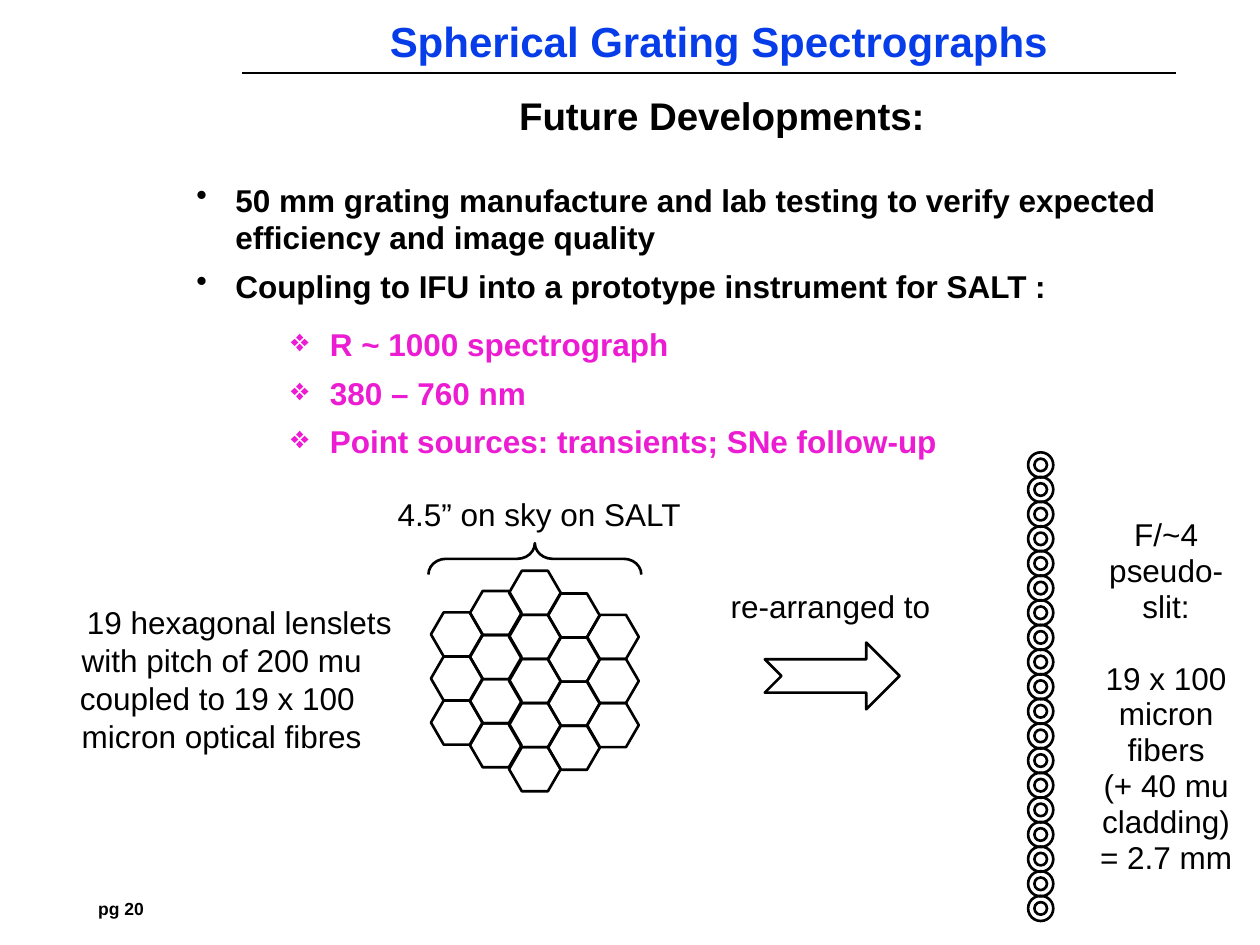
from lxml import etree
from pptx import Presentation
from pptx.dml.color import RGBColor
from pptx.enum.shapes import MSO_CONNECTOR, MSO_SHAPE
from pptx.enum.text import MSO_ANCHOR, MSO_AUTO_SIZE, PP_ALIGN
from pptx.oxml.ns import qn
from pptx.util import Inches, Pt

LEFT, MID = PP_ALIGN.LEFT, PP_ALIGN.CENTER
TOP, CENTRE, BASE = MSO_ANCHOR.TOP, MSO_ANCHOR.MIDDLE, MSO_ANCHOR.BOTTOM
HEXAGON, DONUT = MSO_SHAPE.HEXAGON, MSO_SHAPE.DONUT
BRACE, ARROW = MSO_SHAPE.RIGHT_BRACE, MSO_SHAPE.NOTCHED_RIGHT_ARROW
BLACK, WHITE, BLUE, PINK = "000000", "FFFFFF", "063DE8", "EC1CD3"

TITLE = ("Spherical Grating Spectrographs",
         dict(size=24, color=BLUE, bold=True, align=MID, line=0.9))
HEAD = dict(size=22, bold=True, align=MID, line=0.9, after=24)
POINT = dict(bold=True, bullet="•", margin=0.31, indent=-0.31, after=6)
SUB = dict(POINT, bullet="❖", margin=1.06, color=PINK)
BODY = [
    ("Future Developments:", HEAD),
    ("50 mm grating manufacture and lab testing to verify expected "
     "efficiency and image quality", POINT),
    ("Coupling to IFU into a prototype instrument for SALT :",
     dict(POINT, after=12)),
    ("R ~ 1000 spectrograph", SUB),
    ("380 – 760 nm", SUB),
    ("Point sources: transients; SNe follow-up", SUB),
]
SLIT = dict(align=MID, line=0.95)
# left, top, width, height, anchor, side inset, paragraphs
BOXES = [
    (0.67, 7.17, 0.58, 0.08, CENTRE, 0,
     [("pg 20", dict(size=10, bold=True, align=MID))]),
    (1.46, 0.76, 8.54, 2.9, CENTRE, 0.1, BODY),
    (2.81, 3.94, 2.94, 0.34, TOP, 0.1,
     [("4.5” on sky on SALT", dict(align=MID, line=0.8))]),
    (0.16, 4.74, 3.2, 1.31, TOP, 0.1,
     [("19 hexagonal lenslets\vwith pitch of 200 mu\v"
       "coupled to 19 x 100 \vmicron optical fibres",
       dict(align=MID, indent=0.28))]),
    (5.65, 4.63, 1.88, 0.39, TOP, 0.1, [("re-arranged to", SLIT)]),
    (8.7, 4.06, 1.11, 2.95, TOP, 0,
     [("F/~4 pseudo-slit:", SLIT),
      ("19 x 100 micron fibers\v(+ 40 mu\vcladding)\v= 2.7 mm",
       dict(SLIT, before=20.5))]),
]

HEX_W, HEX_H = 0.41, 0.35
# left, top, count of each column of lenslets
COLUMNS = [(3.42, 4.86, 3), (3.73, 4.69, 4), (4.04, 4.53, 5),
           (4.35, 4.71, 4), (4.66, 4.88, 3)]
FIBRES, RING, RING_X, RING_TOP, RING_END = 19, 0.2, 8.16, 3.59, 7.11


def rgb(code):
    return RGBColor.from_string(code)


def write(frame, paras, anchor, side):
    frame.word_wrap = True
    frame.auto_size = MSO_AUTO_SIZE.NONE
    frame.vertical_anchor = anchor
    frame.margin_left = frame.margin_right = Inches(side)
    for i, (text, look) in enumerate(paras):
        para = frame.add_paragraph() if i else frame.paragraphs[0]
        para.text = text
        props = para._p.get_or_add_pPr()
        props.set("marL", str(Inches(look.get("margin", 0))))
        props.set("indent", str(Inches(look.get("indent", 0))))
        if "bullet" in look:
            etree.SubElement(props, qn("a:buChar"), char=look["bullet"])
        para.alignment = look.get("align", LEFT)
        para.line_spacing = look.get("line", 1.0)
        para.space_before = Pt(look.get("before", 0))
        para.space_after = Pt(look.get("after", 0))
        for run in para.runs:
            run.font.name = "Arial"
            run.font.size = Pt(look.get("size", 18))
            run.font.bold = look.get("bold", False)
            run.font.color.rgb = rgb(look.get("color", BLACK))


def outline(slide, kind, place, adjust, turn=0):
    shape = slide.shapes.add_shape(kind, *map(Inches, place))
    for i, value in enumerate(adjust):
        shape.adjustments[i] = value
    shape.rotation = turn
    shape.shadow.inherit = False
    shape.fill.background()
    shape.line.color.rgb = rgb(BLACK)
    shape.line.width = Pt(1.5)


def main():
    deck = Presentation()
    deck.slide_width, deck.slide_height = Inches(10), Inches(7.5)
    slide = deck.slides.add_slide(deck.slide_layouts[5])

    title = slide.shapes.title
    title.left, title.top, title.width, title.height = map(
        Inches, (1.57, 0.08, 8.27, 0.5))
    write(title.text_frame, [TITLE], BASE, 0.1)

    rule = slide.shapes.add_connector(
        MSO_CONNECTOR.STRAIGHT, *map(Inches, (1.92, 0.58, 9.33, 0.58)))
    rule.line.color.rgb = rgb(BLACK)
    rule.line.width = Pt(1)
    etree.SubElement(rule._element.spPr, qn("a:effectLst"))

    for *place, anchor, side, paras in BOXES:
        box = slide.shapes.add_textbox(*map(Inches, place))
        write(box.text_frame, paras, anchor, side)

    outline(slide, BRACE, (4.12, 3.59, 0.25, 1.69), (0.556, 0.5), 270)
    for x, top, count in COLUMNS:
        for row in range(count):
            outline(slide, HEXAGON, (x, top + row * HEX_H, HEX_W, HEX_H),
                    (0.29,))
    outline(slide, ARROW, (6.07, 5.1, 1.07, 0.53), (0.5, 0.5))
    step = (RING_END - RING_TOP) / (FIBRES - 1)
    for i in range(FIBRES):
        outline(slide, DONUT, (RING_X, RING_TOP + i * step, RING, RING),
                (0.25,))

    deck.save("out.pptx")


if __name__ == "__main__":
    main()
